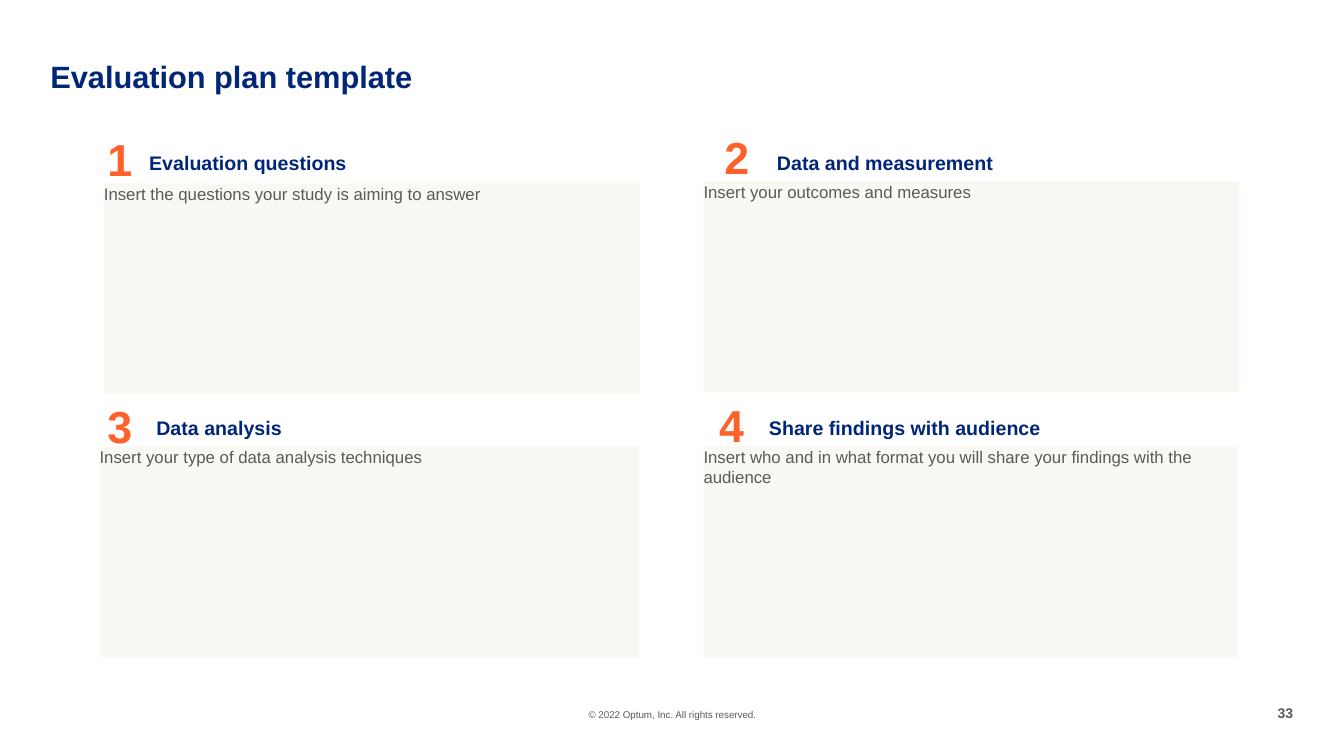
"""Build the four-part evaluation plan slide."""
from pptx import Presentation
from pptx.dml.color import RGBColor
from pptx.enum.shapes import MSO_SHAPE
from pptx.enum.text import MSO_ANCHOR, PP_ALIGN
from pptx.util import Cm, Pt

NAVY = RGBColor(0x00, 0x26, 0x77)
ORANGE = RGBColor(0xFF, 0x61, 0x2B)
GREY = RGBColor(0x5A, 0x5A, 0x5A)
CREAM = RGBColor(0xFA, 0xF8, 0xF2)

TITLE = "Evaluation plan template"
FOOTER = "© 2022 Optum, Inc. All rights reserved."
PAGE = "33"
PARTS = [
    {"head": "Evaluation questions",
     "body": "Insert the questions your study is aiming to answer",
     "num_at": (1.85, 3.2), "head_x": 3.76, "panel": (2.62, 4.62, 13.51)},
    {"head": "Data and measurement",
     "body": "Insert your outcomes and measures",
     "num_at": (17.4, 3.15), "head_x": 19.58, "panel": (17.73, 4.57, 13.51)},
    {"head": "Data analysis",
     "body": "Insert your type of data analysis techniques",
     "num_at": (1.85, 9.93), "head_x": 3.94, "panel": (2.51, 11.25, 13.61)},
    {"head": "Share findings with audience",
     "body": "Insert who and in what format you will share your findings "
             "with the audience",
     "num_at": (17.27, 9.88), "head_x": 19.38, "panel": (17.73, 11.25, 13.46)},
]
HEAD_Y = (3.78, 10.46)
HEAD_W, HEAD_H = 11, 0.61
NUM_W, NUM_H = 2.34, 1.63
PANEL_H = 5.31


def put(slide, text, box, size=12, color=GREY, bold=False, fill=None,
        align=PP_ALIGN.LEFT, anchor=MSO_ANCHOR.TOP, pad=(0, 0), wrap=True,
        line=None):
    """Add a text box, or a filled rectangle when fill is given."""
    area = [Cm(n) for n in box]
    if fill is None:
        shape = slide.shapes.add_textbox(*area)
    else:
        shape = slide.shapes.add_shape(MSO_SHAPE.RECTANGLE, *area)
        shape.shadow.inherit = False
        shape.fill.solid()
        shape.fill.fore_color.rgb = fill
        shape.line.fill.background()
    frame = shape.text_frame
    frame.word_wrap = wrap
    frame.vertical_anchor = anchor
    frame.margin_left = frame.margin_right = Cm(pad[0])
    frame.margin_top = frame.margin_bottom = Cm(pad[1])
    para = frame.paragraphs[0]
    para.alignment = align
    para.line_spacing = line
    run = para.add_run()
    run.text = text
    run.font.name = "Arial"
    run.font.size = Pt(size)
    run.font.bold = bold
    run.font.color.rgb = color


def main():
    """Lay out the slide and save it."""
    deck = Presentation()
    deck.slide_width, deck.slide_height = Cm(33.87), Cm(19.05)
    slide = deck.slides.add_slide(deck.slide_layouts[6])

    put(slide, FOOTER, (13.06, 17.86, 7.77, 0.3), size=7,
        align=PP_ALIGN.CENTER)
    put(slide, PAGE, (32.16, 17.75, 0.43, 0.43), size=10, bold=True,
        align=PP_ALIGN.RIGHT, wrap=False)
    put(slide, TITLE, (1.27, 1.55, 26.67, 0.84), size=22, color=NAVY,
        bold=True, line=0.9)

    for i, part in enumerate(PARTS):
        left, top, width = part["panel"]
        put(slide, part["body"], (left, top, width, PANEL_H), fill=CREAM)
        put(slide, part["head"],
            (part["head_x"], HEAD_Y[i // 2], HEAD_W, HEAD_H),
            size=14, color=NAVY, bold=True, anchor=MSO_ANCHOR.BOTTOM)
        put(slide, str(i + 1), (*part["num_at"], NUM_W, NUM_H), size=32,
            color=ORANGE, bold=True, align=PP_ALIGN.CENTER, pad=(0.25, 0.13))

    deck.save("out.pptx")


if __name__ == "__main__":
    main()
